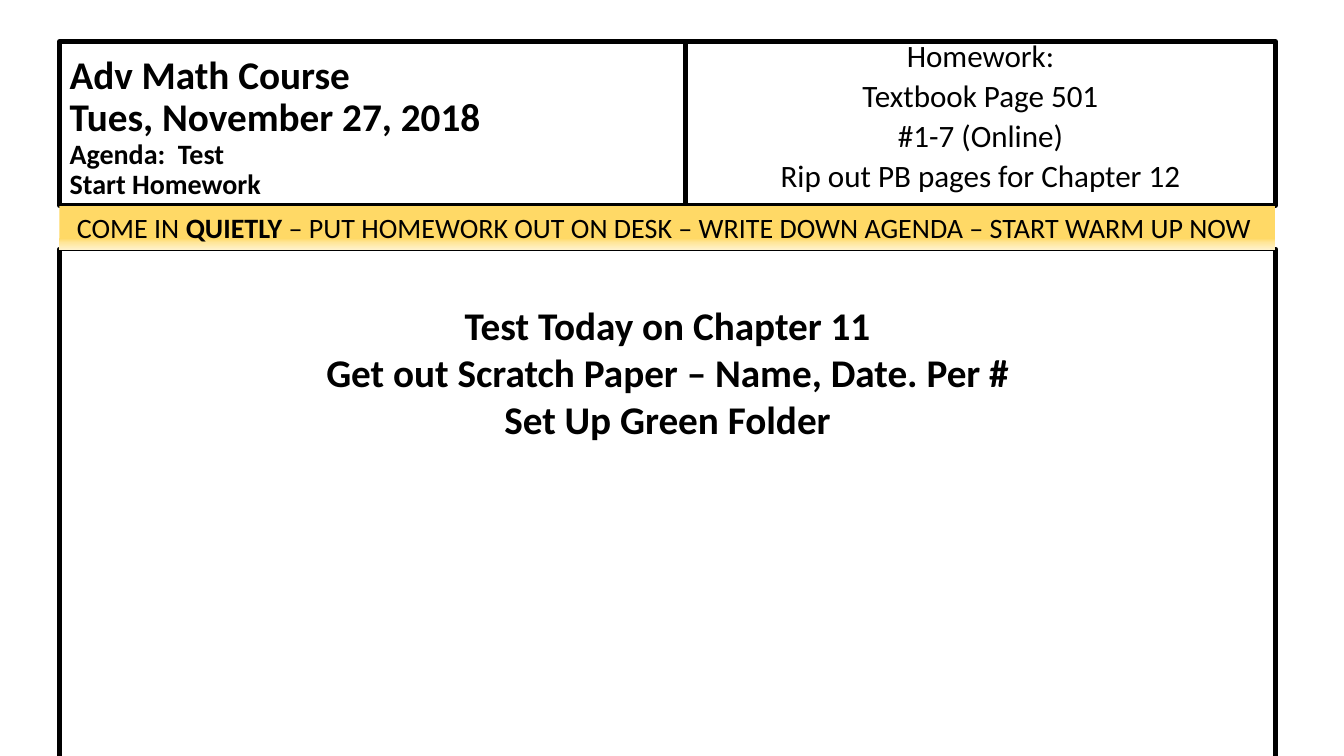
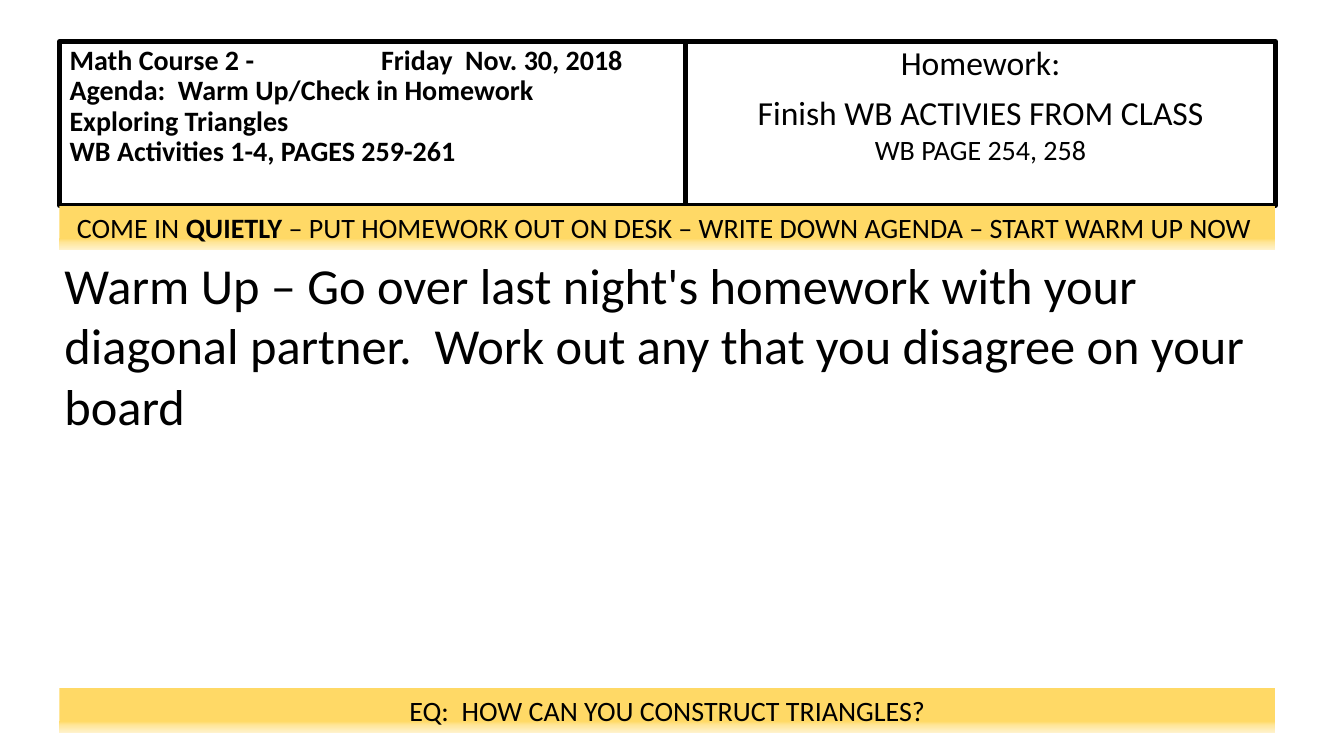
from dataclasses import dataclass

from lxml import etree
from pptx import Presentation
from pptx.dml.color import RGBColor
from pptx.enum.shapes import MSO_SHAPE
from pptx.enum.text import MSO_ANCHOR, MSO_AUTO_SIZE, PP_ALIGN
from pptx.oxml.ns import qn
from pptx.util import Inches, Pt

RECTANGLE = MSO_SHAPE.RECTANGLE
TOP, BOTTOM = MSO_ANCHOR.TOP, MSO_ANCHOR.BOTTOM
LEFT, CENTER = PP_ALIGN.LEFT, PP_ALIGN.CENTER
NO_FIT = MSO_AUTO_SIZE.NONE

BLACK = RGBColor(0x00, 0x00, 0x00)
GOLD = RGBColor(0xFF, 0xD9, 0x66)
PALE_GOLD = RGBColor(0xFF, 0xE6, 0x99)
CREAM = RGBColor(0xFF, 0xF2, 0xCC)
BAND_STOPS = ((0, GOLD), (74, GOLD), (83, PALE_GOLD), (100, CREAM))

FONT = "Calibri"
BORDER = Pt(3.25)
TITLE_ONLY = 5
SLIDE_WIDTH, SLIDE_HEIGHT = 13.33, 7.5
COLUMNS = (0.59, 6.8, 12.65)
ROWS = (0.41, 2.04, 2.47, 7.75)
BAND_HEIGHT = 0.44
FOOTER_TOP = 6.83
INSET = 0.05
DATE_TAB = 3.09


@dataclass
class Box:
    left: float
    top: float
    width: float
    height: float

    def place(self):
        return [Inches(n) for n in (self.left, self.top, self.width, self.height)]


@dataclass
class Span:
    text: str
    size: float
    bold: bool = False


def cell(row, first=0, last=2):
    return Box(COLUMNS[first], ROWS[row],
               COLUMNS[last] - COLUMNS[first], ROWS[row + 1] - ROWS[row])


def band_box(top):
    return Box(COLUMNS[0], top, COLUMNS[-1] - COLUMNS[0], BAND_HEIGHT)


def write(shape, paragraphs, align=CENTER, anchor=TOP, spacing=1.0, before=0):
    frame = shape.text_frame
    frame.word_wrap = True
    frame.auto_size = NO_FIT
    frame.vertical_anchor = anchor
    for index, spans in enumerate(paragraphs):
        para = frame.add_paragraph() if index else frame.paragraphs[0]
        para.alignment = align
        para.line_spacing = spacing
        para.space_before = Pt(before)
        for span in spans:
            run = para.add_run()
            run.text = span.text
            run.font.name = FONT
            run.font.size = Pt(span.size)
            run.font.bold = span.bold
            run.font.color.rgb = BLACK


def outline(shape):
    shape.fill.background()
    shape.line.color.rgb = BLACK
    shape.line.width = BORDER


def add_rectangle(page, box):
    shape = page.shapes.add_shape(RECTANGLE, *box.place())
    shape.shadow.inherit = False
    return shape


def add_bordered(page, box):
    shape = add_rectangle(page, box)
    outline(shape)
    return shape


def add_agenda(page, box, lines, anchor):
    title = page.shapes.title
    title.left, title.top, title.width, title.height = box.place()
    outline(title)
    write(title, lines, LEFT, anchor, 0.9)
    return title


def set_tab(para, inches):
    tabs = etree.SubElement(para._p.get_or_add_pPr(), qn("a:tabLst"))
    etree.SubElement(tabs, qn("a:tab"), pos=str(Inches(inches)), algn="l")


def add_band(page, box, spans):
    band = add_rectangle(page, box)
    band.line.fill.background()
    band.fill.gradient()
    band.fill.gradient_angle = 270
    stops = band._element.spPr.find(qn("a:gradFill")).find(qn("a:gsLst"))
    for stop in list(stops):
        stops.remove(stop)
    for share, colour in BAND_STOPS:
        stop = etree.SubElement(stops, qn("a:gs"), pos=str(share * 1000))
        etree.SubElement(stop, qn("a:srgbClr"), val=str(colour))
    write(band, [spans])


def add_entry_band(page):
    add_band(page, band_box(ROWS[1]), [
        Span("COME IN ", 20), Span("QUIETLY", 20, True),
        Span(" – PUT HOMEWORK OUT ON DESK – WRITE DOWN AGENDA – START WARM UP NOW ", 20)])


def add_test_page(deck):
    page = deck.slides.add_slide(deck.slide_layouts[TITLE_ONLY])
    add_agenda(page, cell(0, 0, 1), [
        [Span("Adv Math Course", 28, True)],
        [Span("Tues, November 27, 2018", 28, True)],
        [Span("Agenda:  Test", 20, True)],
        [Span("Start Homework", 20, True)]], BOTTOM)
    homework = ("Homework:", "Textbook Page 501", "#1-7 (Online)",
                "Rip out PB pages for Chapter 12")
    write(add_bordered(page, cell(0, 1, 2)),
          [[Span(line, 22.2)] for line in homework], spacing=0.7, before=10)
    board = add_bordered(page, cell(2))
    notices = ("Test Today on Chapter 11",
               "Get out Scratch Paper – Name, Date. Per #",
               "Set Up Green Folder")
    write(board, [[Span(line, 28, True)] for line in notices])
    board.text_frame.margin_top = Inches(0.52)
    add_entry_band(page)


def add_lesson_page(deck):
    page = deck.slides.add_slide(deck.slide_layouts[TITLE_ONLY])
    agenda = ("Math Course 2 -\tFriday  Nov. 30, 2018",
              "Agenda:  Warm Up/Check in Homework",
              "Exploring Triangles",
              "WB Activities 1-4, PAGES 259-261")
    title = add_agenda(page, cell(0, 0, 1),
                       [[Span(line, 20, True)] for line in agenda], TOP)
    set_tab(title.text_frame.paragraphs[0], DATE_TAB)
    homework = add_bordered(page, cell(0, 1, 2))
    write(homework, [[Span("Homework:", 24)],
                     [Span("Finish WB ACTIVIES FROM CLASS", 24)],
                     [Span("WB PAGE 254, 258", 20)]], spacing=0.9, before=10)
    pages = homework.text_frame.paragraphs[-1]
    pages.line_spacing, pages.space_before = 1.0, Pt(0)
    add_entry_band(page)
    add_band(page, band_box(FOOTER_TOP),
             [Span("EQ:  HOW CAN YOU CONSTRUCT TRIANGLES?", 20)])
    body = cell(2)
    box = Box(body.left - INSET, body.top, body.width + INSET, 1.92)
    write(page.shapes.add_textbox(*box.place()), [[Span(
        "Warm Up – Go over last night's homework with your diagonal partner.  "
        "Work out any that you disagree on your board", 36)]], LEFT)


def main():
    deck = Presentation()
    deck.slide_width, deck.slide_height = Inches(SLIDE_WIDTH), Inches(SLIDE_HEIGHT)
    add_test_page(deck)
    add_lesson_page(deck)
    deck.save("out.pptx")


if __name__ == "__main__":
    main()
